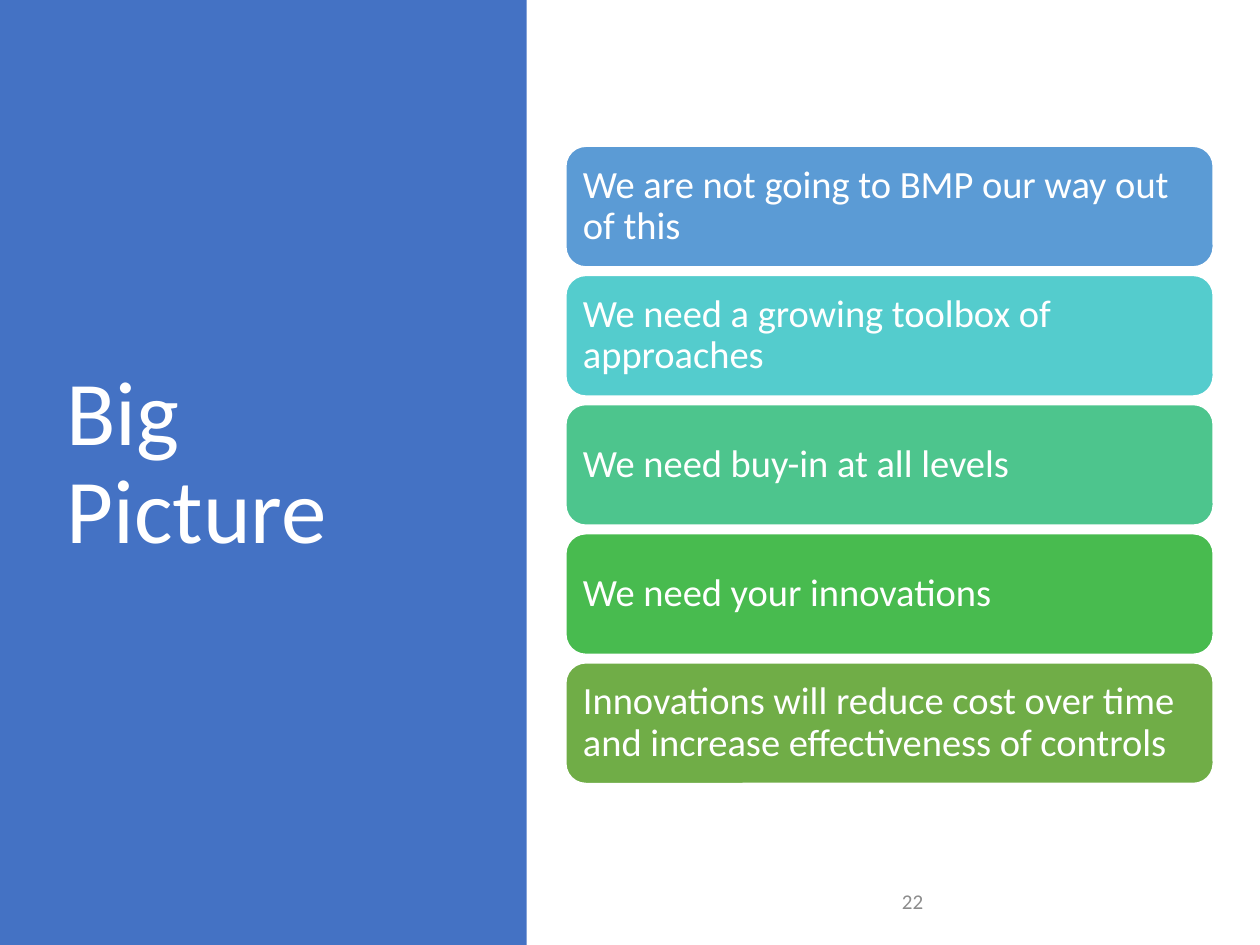
from pptx import Presentation
from pptx.dml.color import RGBColor
from pptx.enum.shapes import MSO_SHAPE
from pptx.enum.text import MSO_ANCHOR, PP_ALIGN
from pptx.util import Inches, Pt

WHITE = RGBColor(0xFF, 0xFF, 0xFF)
BLUE = RGBColor(0x44, 0x72, 0xC4)
GRAY = RGBColor(0x8C, 0x8C, 0x8C)
SKY = RGBColor(0x5B, 0x9B, 0xD5)
TURQUOISE = RGBColor(0x54, 0xCC, 0xCD)
MINT = RGBColor(0x4D, 0xC5, 0x8D)
GREEN = RGBColor(0x48, 0xBB, 0x4F)
OLIVE = RGBColor(0x70, 0xAD, 0x47)

WIDTH, HEIGHT = 10, 7.5
CARD_TOP, CARD_BOTTOM, CARD_HEIGHT = 1.16, 6.22, 0.96

MESSAGES = [
    ("We are not going to BMP our way out of this", SKY),
    ("We need a growing toolbox of approaches", TURQUOISE),
    ("We need buy-in at all levels", MINT),
    ("We need your innovations", GREEN),
    ("Innovations will reduce cost over time and increase effectiveness of controls", OLIVE),
]


class Deck:
    font = "Calibri"

    def __init__(self):
        self.prs = Presentation()
        self.prs.slide_width = Inches(WIDTH)
        self.prs.slide_height = Inches(HEIGHT)
        self.s = self.prs.slides.add_slide(self.prs.slide_layouts[6])

    def box(self, x, y, w, h):
        sw, sh = self.prs.slide_width, self.prs.slide_height
        return [round(v) for v in (x * sw, y * sh, w * sw, h * sh)]

    def shape(self, kind, area, fill, line=None):
        sp = self.s.shapes.add_shape(kind, *self.box(*area))
        sp.shadow.inherit = False
        sp.fill.solid()
        sp.fill.fore_color.rgb = fill
        if line is None:
            sp.line.fill.background()
        else:
            sp.line.color.rgb = line
            sp.line.width = Pt(1)
        return sp

    def label(self, sp, text, size, color, spacing=1.0):
        tf = sp.text_frame
        tf.word_wrap = True
        tf.vertical_anchor = MSO_ANCHOR.MIDDLE
        p = tf.paragraphs[0]
        p.alignment = PP_ALIGN.LEFT
        p.line_spacing = spacing
        r = p.add_run()
        r.text = text
        r.font.name = self.font
        r.font.size = Pt(size)
        r.font.color.rgb = color
        return tf

    def text(self, area, text, size, color, spacing=1.0):
        sp = self.s.shapes.add_textbox(*self.box(*area))
        self.label(sp, text, size, color, spacing)

    def card(self, area, text, fill):
        sp = self.shape(MSO_SHAPE.ROUNDED_RECTANGLE, area, fill, WHITE)
        tf = self.label(sp, text, 22, WHITE, 0.9)
        tf.margin_left = tf.margin_right = Inches(0.09)
        tf.margin_top = tf.margin_bottom = Inches(0.09)


def main():
    deck = Deck()
    deck.shape(MSO_SHAPE.RECTANGLE, (0, 0, 4.18 / WIDTH, 1), BLUE)
    deck.text((0.43 / WIDTH, 0.68 / HEIGHT, 3.12 / WIDTH, 6.02 / HEIGHT),
              "Big Picture", 52, WHITE, 0.9)
    deck.text((7.06 / WIDTH, 6.95 / HEIGHT, 2.25 / WIDTH, 0.4 / HEIGHT), "22", 12, GRAY)
    pitch = (CARD_BOTTOM - CARD_HEIGHT - CARD_TOP) / (len(MESSAGES) - 1)
    for i, (message, fill) in enumerate(MESSAGES):
        top = CARD_TOP + i * pitch
        deck.card((4.49 / WIDTH, top / HEIGHT, 5.14 / WIDTH, CARD_HEIGHT / HEIGHT), message, fill)
    deck.prs.save("out.pptx")


if __name__ == "__main__":
    main()
